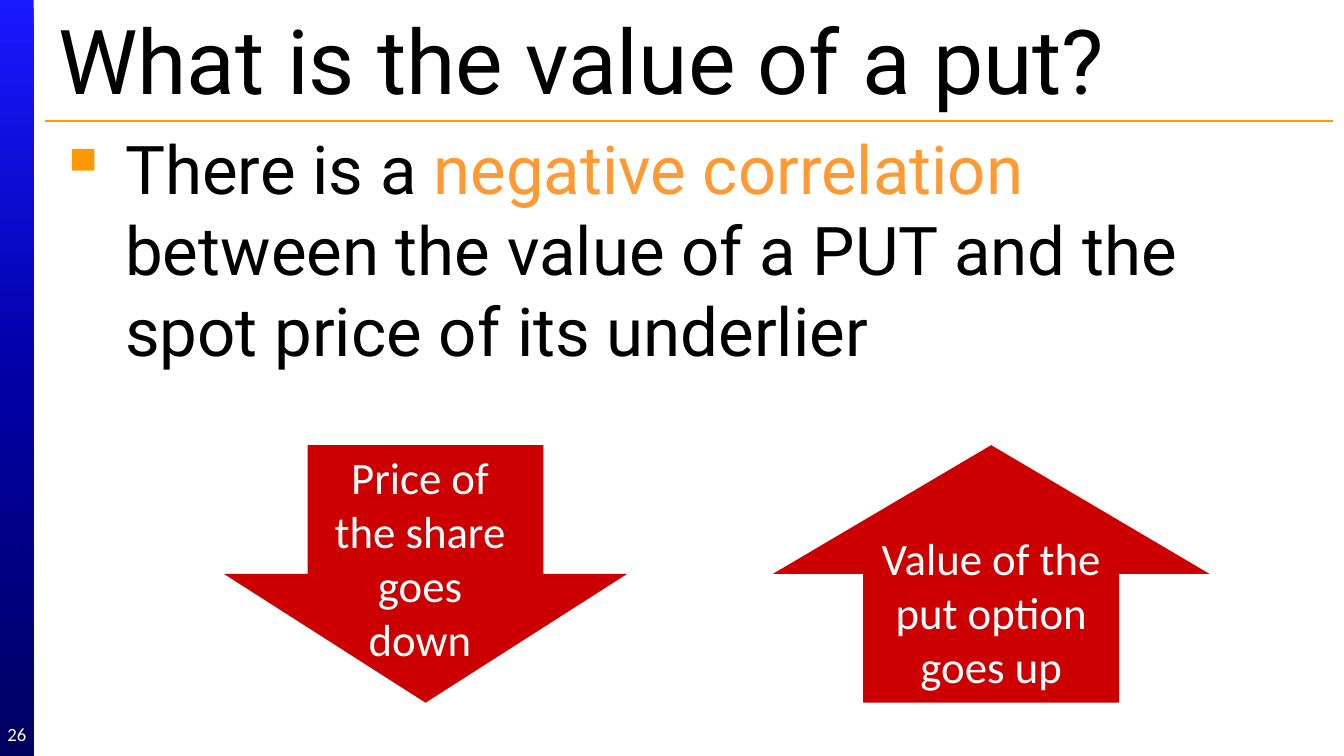
from copy import deepcopy
from dataclasses import dataclass

from lxml import etree
from pptx import Presentation
from pptx.dml.color import RGBColor
from pptx.enum.shapes import MSO_CONNECTOR, MSO_SHAPE
from pptx.enum.text import MSO_ANCHOR, PP_ALIGN
from pptx.oxml.ns import qn
from pptx.util import Pt

UP, DOWN, RECTANGLE = MSO_SHAPE.UP_ARROW, MSO_SHAPE.DOWN_ARROW, MSO_SHAPE.RECTANGLE
STRAIGHT = MSO_CONNECTOR.STRAIGHT
TOP, MIDDLE = MSO_ANCHOR.TOP, MSO_ANCHOR.MIDDLE
LEFT, CENTER = PP_ALIGN.LEFT, PP_ALIGN.CENTER

BLACK = RGBColor(0x00, 0x00, 0x00)
WHITE = RGBColor(0xFF, 0xFF, 0xFF)
RED = RGBColor(0xCC, 0x00, 0x00)
AMBER = RGBColor(0xFF, 0x99, 0x00)
ORANGE = RGBColor(0xFF, 0x99, 0x33)
BAND_COLOURS = (
    RGBColor(0x19, 0x19, 0xFF),
    RGBColor(0x00, 0x00, 0xA5),
    RGBColor(0x00, 0x00, 0x60),
)

HEADING_FONT = "Roboto"
LABEL_FONT = "Calibri"
BAND_WIDTH = 18
ARROW_TOP, ARROW_HEIGHT = 238.5, 138


@dataclass(frozen=True)
class Box:
    left: float
    top: float
    width: float
    height: float

    def lengths(self) -> tuple:
        return Pt(self.left), Pt(self.top), Pt(self.width), Pt(self.height)


@dataclass(frozen=True)
class Phrase:
    text: str
    size: float
    font: str
    colour: RGBColor


@dataclass(frozen=True)
class Arrow:
    direction: MSO_SHAPE
    left: float
    width: float
    stem: float


def write(frame, phrases: list[Phrase], align=LEFT, anchor=TOP) -> None:
    frame.word_wrap = True
    frame.vertical_anchor = anchor
    paragraph = frame.paragraphs[0]
    paragraph.alignment = align
    for phrase in phrases:
        run = paragraph.add_run()
        run.text = phrase.text
        run.font.size = Pt(phrase.size)
        run.font.name = phrase.font
        run.font.color.rgb = phrase.colour


def add_text(slide, box: Box, phrases: list[Phrase], align=LEFT, anchor=TOP):
    frame = slide.shapes.add_textbox(*box.lengths()).text_frame
    write(frame, phrases, align, anchor)
    return frame


def add_band(slide, height: float) -> None:
    band = slide.shapes.add_shape(RECTANGLE, *Box(0, 0, BAND_WIDTH, height).lengths())
    band.shadow.inherit = False
    band.line.fill.background()
    band.fill.gradient()
    band.fill.gradient_angle = 270
    stop_list = band._element.spPr.find(f".//{qn('a:gsLst')}")
    stop_list.insert(1, deepcopy(stop_list[0]))
    for index, (stop, colour) in enumerate(zip(band.fill.gradient_stops, BAND_COLOURS)):
        stop.position = index / 2
        stop.color.rgb = colour


def add_rule(slide) -> None:
    rule = slide.shapes.add_connector(STRAIGHT, Pt(24), Pt(64.8), Pt(714), Pt(64.8))
    rule.line.color.rgb = AMBER
    rule.line.width = Pt(0.75)
    etree.SubElement(rule._element.spPr, qn("a:effectLst"))


def add_bullet(paragraph, indent: float) -> None:
    properties = paragraph._p.get_or_add_pPr()
    properties.set("marL", str(Pt(indent)))
    properties.set("indent", str(-Pt(indent)))
    colour = etree.SubElement(properties, qn("a:buClr"))
    etree.SubElement(colour, qn("a:srgbClr"), val=str(AMBER))
    etree.SubElement(properties, qn("a:buChar"), char="▪")


def add_arrow(slide, arrow: Arrow):
    box = Box(arrow.left, ARROW_TOP, arrow.width, ARROW_HEIGHT)
    shape = slide.shapes.add_shape(arrow.direction, *box.lengths())
    shape.shadow.inherit = False
    shape.adjustments[0] = arrow.stem
    shape.adjustments[1] = 0.5
    shape.fill.solid()
    shape.fill.fore_color.rgb = RED
    shape.line.fill.background()
    return shape


def label(text: str) -> list[Phrase]:
    return [Phrase(text, 24, LABEL_FONT, WHITE)]


def main() -> None:
    presentation = Presentation()
    presentation.slide_width, presentation.slide_height = Pt(720), Pt(405)
    slide = presentation.slides.add_slide(presentation.slide_layouts[5])

    add_band(slide, 405)
    add_rule(slide)

    title = slide.shapes.title
    title.left, title.top, title.width, title.height = Box(24, 4.5, 690, 54).lengths()
    question = Phrase("What is the value of a put?", 48, HEADING_FONT, BLACK)
    write(title.text_frame, [question], anchor=MIDDLE)

    statement = add_text(slide, Box(24, 64.8, 672, 312), [
        Phrase("There is a ", 36, HEADING_FONT, BLACK),
        Phrase("negative correlation ", 36, HEADING_FONT, ORANGE),
        Phrase("between the value of a PUT and the spot price of its underlier",
               36, HEADING_FONT, BLACK),
    ])
    add_bullet(statement.paragraphs[0], 36)

    page_number = add_text(slide, Box(0, 382.5, BAND_WIDTH, 21.6),
                           [Phrase("26", 10, LABEL_FONT, WHITE)], CENTER, MIDDLE)
    page_number.margin_left = page_number.margin_right = Pt(0)
    page_number.margin_top = page_number.margin_bottom = Pt(0)

    add_arrow(slide, Arrow(DOWN, 120, 216, 0.584))
    put_value = add_arrow(slide, Arrow(UP, 414, 234, 0.586))
    write(put_value.text_frame, label("Value of the put option goes up"), CENTER, MIDDLE)
    add_text(slide, Box(168, 237.6, 114, 124), label("Price of the share goes down"), CENTER)

    presentation.save("out.pptx")


if __name__ == "__main__":
    main()
